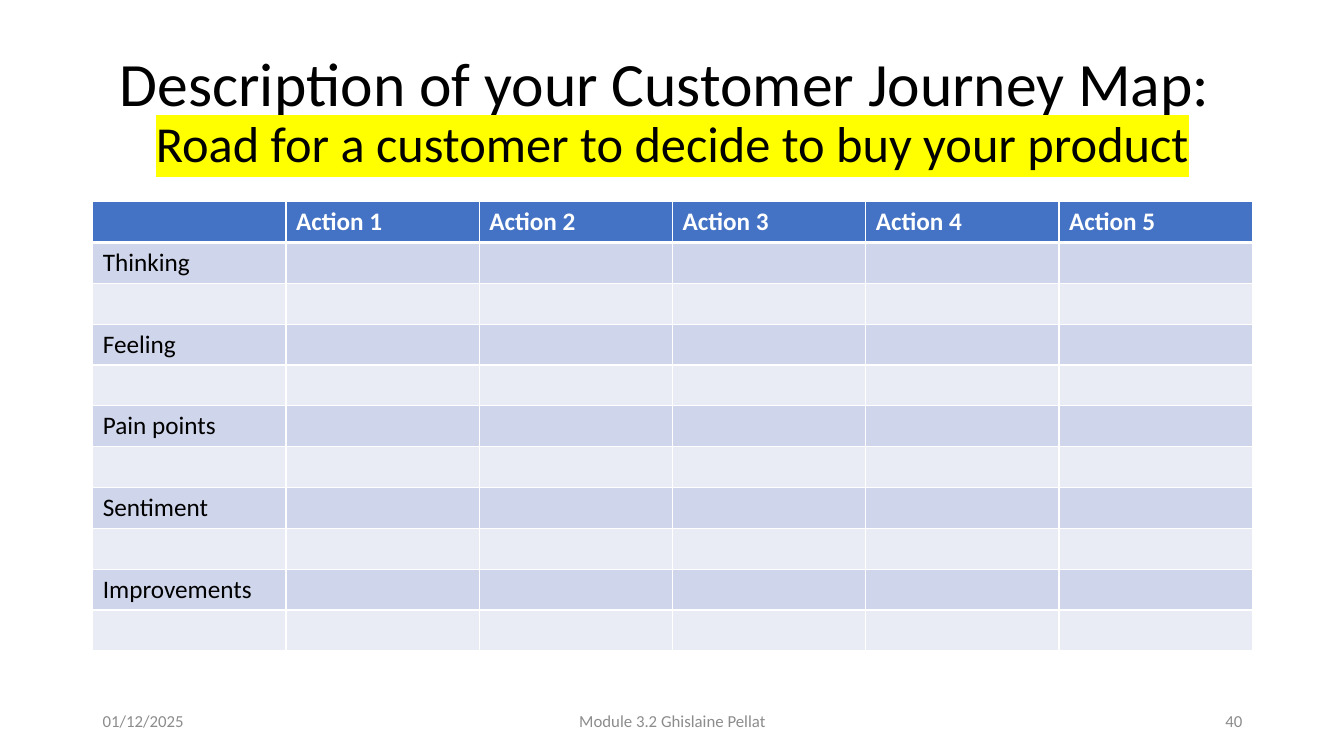
from dataclasses import dataclass

from lxml.etree import SubElement
from pptx import Presentation
from pptx.dml.color import RGBColor
from pptx.enum.text import MSO_ANCHOR, PP_ALIGN
from pptx.oxml.ns import qn
from pptx.util import Inches, Pt

BLACK, WHITE, GREY, YELLOW = "000000", "FFFFFF", "8C8C8C", "FFFF00"
HEADER_BLUE, BAND_DARK, BAND_LIGHT = "4472C4", "CFD5EA", "E9EBF5"
MARGIN, CONTENT_WIDTH = 0.92, 11.5
TABLE_TOP, TABLE_HEIGHT = 2, 4.46
ACTIONS = [f"Action {number}" for number in range(1, 6)]
STAGES = ["Thinking", "Feeling", "Pain points", "Sentiment", "Improvements"]


@dataclass
class FooterPart:
    text: str
    left: float
    width: float
    align: PP_ALIGN


FOOTER = [
    FooterPart("01/12/2025", MARGIN, 3, PP_ALIGN.LEFT),
    FooterPart("Module 3.2 Ghislaine Pellat", 4.42, 4.5, PP_ALIGN.CENTER),
    FooterPart("40", 9.42, 3, PP_ALIGN.RIGHT),
]


def color(value: str) -> RGBColor:
    return RGBColor.from_string(value)


def add_run(paragraph, text: str, size: float, ink: str, bold: bool = False):
    run = paragraph.add_run()
    run.text = text
    run.font.name = "Calibri"
    run.font.size = Pt(size)
    run.font.bold = bold
    run.font.color.rgb = color(ink)
    return run


def highlight(run, ink: str) -> None:
    mark = SubElement(run.font._element, qn("a:highlight"))
    SubElement(mark, qn("a:srgbClr"), val=ink)
    run.font._element.find(qn("a:solidFill")).addnext(mark)


def add_text_area(slide, left: float, top: float, width: float, height: float, align: PP_ALIGN):
    frame = slide.shapes.add_textbox(
        Inches(left), Inches(top), Inches(width), Inches(height)).text_frame
    frame.word_wrap = True
    frame.vertical_anchor = MSO_ANCHOR.MIDDLE
    frame.paragraphs[0].alignment = align
    return frame.paragraphs[0]


def set_borders(cell, top: float, bottom: float) -> None:
    properties = cell._tc.get_or_add_tcPr()
    for side, points in (("L", 1), ("R", 1), ("T", top), ("B", bottom)):
        line = SubElement(properties, qn(f"a:ln{side}"), w=str(Pt(points)))
        SubElement(SubElement(line, qn("a:solidFill")), qn("a:srgbClr"), val=WHITE)


def add_title(slide) -> None:
    title = add_text_area(slide, MARGIN, 0.4, CONTENT_WIDTH, 1.45, PP_ALIGN.CENTER)
    title.line_spacing = 0.9
    add_run(title, "Description of your Customer Journey Map: ", 44, BLACK)
    title.add_line_break()
    subtitle = add_run(title, "Road for a customer to decide to buy your product", 36, BLACK)
    highlight(subtitle, YELLOW)


def add_journey_map(slide) -> None:
    # Each stage is followed by an empty row
    rows = [["", *ACTIONS]]
    for stage in STAGES:
        rows += [[stage] + [""] * len(ACTIONS), [""] * (len(ACTIONS) + 1)]
    journey = slide.shapes.add_table(
        len(rows), len(rows[0]), Inches(MARGIN), Inches(TABLE_TOP),
        Inches(CONTENT_WIDTH), Inches(TABLE_HEIGHT)).table
    journey.horz_banding = False
    for column in journey.columns:
        column.width = Inches(CONTENT_WIDTH / len(rows[0]))
    for index, texts in enumerate(rows):
        journey.rows[index].height = Inches(TABLE_HEIGHT / len(rows))
        header = index == 0
        band = HEADER_BLUE if header else BAND_DARK if index % 2 else BAND_LIGHT
        for position, text in enumerate(texts):
            cell = journey.cell(index, position)
            set_borders(cell, top=3 if index == 1 else 1, bottom=3 if header else 1)
            cell.fill.solid()
            cell.fill.fore_color.rgb = color(band)
            if text:
                add_run(cell.text_frame.paragraphs[0], text, 18,
                        WHITE if header else BLACK, header)


def add_footer(slide) -> None:
    for part in FOOTER:
        paragraph = add_text_area(slide, part.left, 6.95, part.width, 0.4, part.align)
        add_run(paragraph, part.text, 12, GREY)


def main() -> None:
    deck = Presentation()
    deck.slide_width, deck.slide_height = Inches(13.33), Inches(7.5)
    slide = deck.slides.add_slide(deck.slide_layouts[6])
    add_title(slide)
    add_journey_map(slide)
    add_footer(slide)
    deck.save("out.pptx")


if __name__ == "__main__":
    main()
